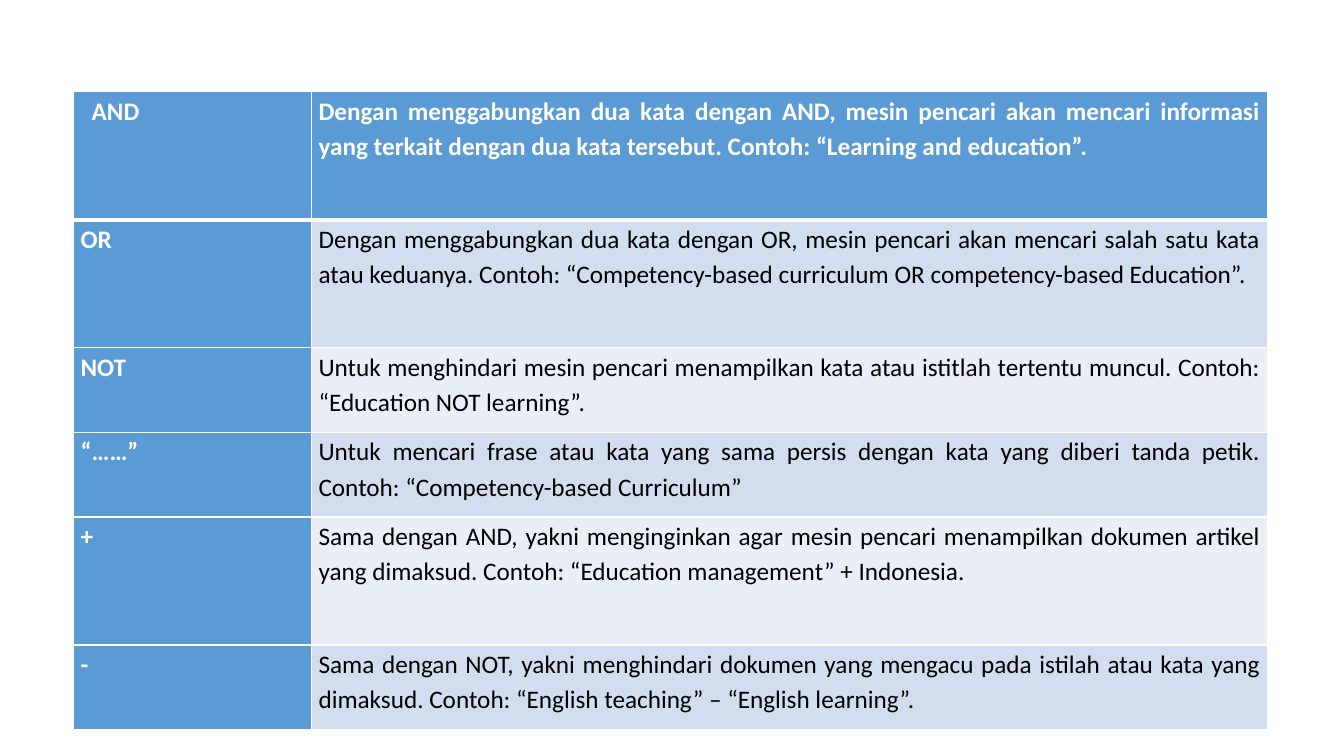
import pptx
import pptx.util
import pptx.dml.color
import pptx.enum.text
import pptx.oxml
import pptx.oxml.ns

Inches = pptx.util.Inches
Pt = pptx.util.Pt
RGBColor = pptx.dml.color.RGBColor

WHITE = RGBColor(0xFF, 0xFF, 0xFF)
BLACK = RGBColor(0x00, 0x00, 0x00)
BLUE = RGBColor(0x5B, 0x9B, 0xD5)
BAND_DARK = RGBColor(0xD2, 0xDE, 0xEF)
BAND_LIGHT = RGBColor(0xEA, 0xEF, 0xF7)

OPERATORS = [
    ("AND", 1.27, "Dengan menggabungkan dua kata dengan AND, mesin pencari akan mencari informasi yang terkait dengan dua kata tersebut. Contoh: “Learning and education”."),
    ("OR", 1.27, "Dengan menggabungkan dua kata dengan OR, mesin pencari akan mencari salah satu kata atau keduanya. Contoh: “Competency-based curriculum OR competency-based Education”."),
    ("NOT", 0.84, "Untuk menghindari mesin pencari menampilkan kata atau istitlah tertentu muncul. Contoh: “Education NOT learning”."),
    ("“……”", 0.84, "Untuk mencari frase atau kata yang sama persis dengan kata yang diberi tanda petik. Contoh: “Competency-based Curriculum”"),
    ("+", 1.27, "Sama dengan AND, yakni menginginkan agar mesin pencari menampilkan dokumen artikel yang dimaksud. Contoh: “Education management” + Indonesia."),
    ("-", 0.84, "Sama dengan NOT, yakni menghindari dokumen yang mengacu pada istilah atau kata yang dimaksud. Contoh: “English teaching” – “English learning”."),
]


def add_border(cell, side, points):
    line = pptx.oxml.parse_xml(
        f'<a:{side} {pptx.oxml.ns.nsdecls("a")} w="{Pt(points)}">'
        f'<a:solidFill><a:srgbClr val="{WHITE}"/></a:solidFill></a:{side}>'
    )
    cell._tc.get_or_add_tcPr().append(line)


def fill_cell(cell, text, fill, color, bold):
    cell.margin_left = cell.margin_right = Inches(0.07)
    cell.margin_top = cell.margin_bottom = 0
    cell.fill.solid()
    cell.fill.fore_color.rgb = fill
    para = cell.text_frame.paragraphs[0]
    para.alignment = pptx.enum.text.PP_ALIGN.JUSTIFY
    para.line_spacing = 1.15
    para.space_after = Pt(10)
    span = para.add_run()
    span.text = text
    span.font.name = "Calibri"
    span.font.size = Pt(18)
    span.font.bold = bold
    span.font.color.rgb = color


deck = pptx.Presentation()
deck.slide_width = Inches(13.33)
deck.slide_height = Inches(7.5)
page = deck.slides.add_slide(deck.slide_layouts[6])

table = page.shapes.add_table(
    len(OPERATORS), 2, Inches(0.73), Inches(0.91), Inches(11.84), Inches(6.33)
).table
table.first_col = True
table.columns[0].width = Inches(2.36)
table.columns[1].width = Inches(9.48)

for index, (operator, height, meaning) in enumerate(OPERATORS):
    table.rows[index].height = Inches(height)
    header = index == 0
    for cell in table.rows[index].cells:
        add_border(cell, "lnL", 1)
        add_border(cell, "lnR", 1)
        add_border(cell, "lnT", 3 if index == 1 else 1)
        add_border(cell, "lnB", 3 if header else 1)
    band = BLUE if header else BAND_DARK if index % 2 else BAND_LIGHT
    fill_cell(table.cell(index, 0), operator, BLUE, WHITE, True)
    fill_cell(table.cell(index, 1), meaning, band, WHITE if header else BLACK, header)

table.cell(0, 0).margin_left = Inches(0.18)

deck.save("out.pptx")
